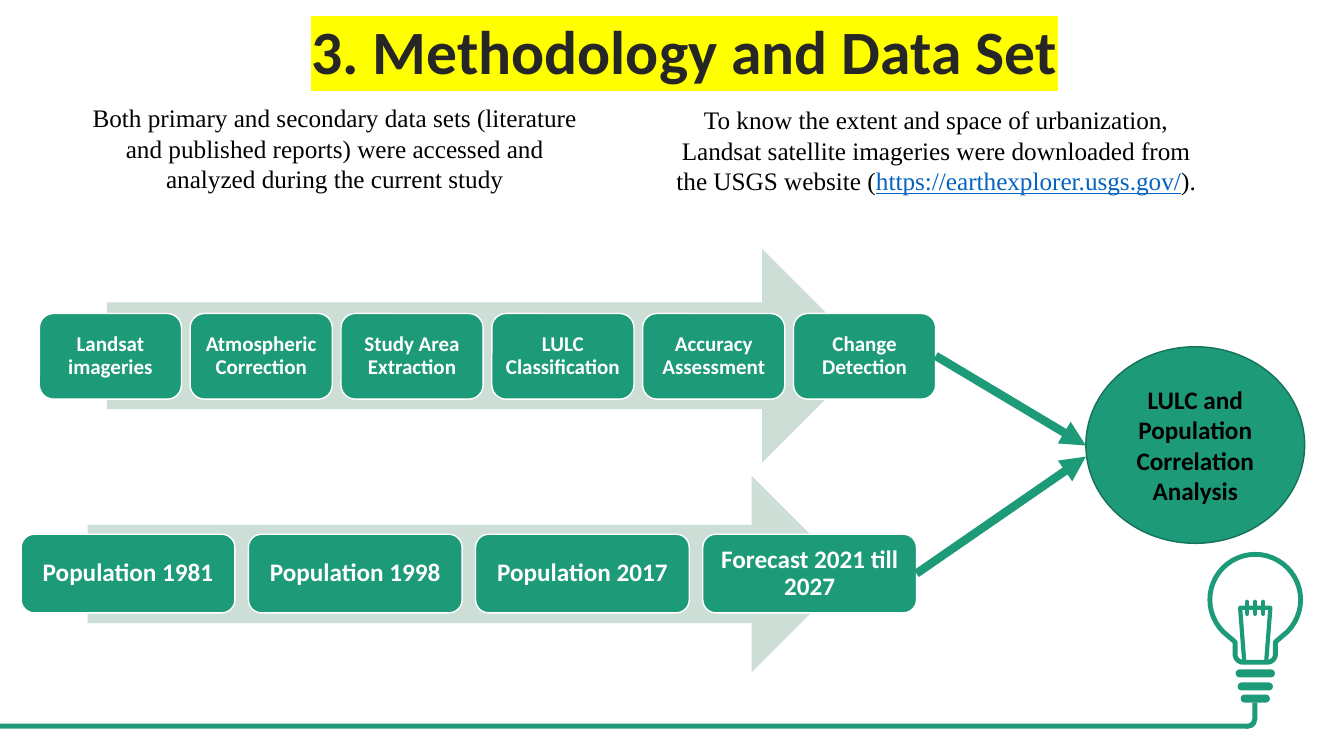
from dataclasses import dataclass
from math import cos, radians, sin

from lxml import etree
from pptx import Presentation
from pptx.dml.color import RGBColor
from pptx.enum.shapes import MSO_CONNECTOR, MSO_SHAPE
from pptx.enum.text import MSO_ANCHOR, PP_ALIGN
from pptx.oxml.ns import qn
from pptx.util import Inches, Pt

ROUND = MSO_SHAPE.ROUNDED_RECTANGLE
RECT = MSO_SHAPE.RECTANGLE
ARROW = MSO_SHAPE.RIGHT_ARROW
OVAL = MSO_SHAPE.OVAL
BEND = MSO_SHAPE.BLOCK_ARC
STRAIGHT = MSO_CONNECTOR.STRAIGHT
MIDDLE = MSO_ANCHOR.MIDDLE
TOP = MSO_ANCHOR.TOP
CENTER = PP_ALIGN.CENTER

SANS, SERIF = "Calibri", "Times New Roman"
COLORS = {
    "green": "1D9A78", "edge": "157259", "pale": "CDDED6", "white": "FFFFFF",
    "black": "000000", "ink": "262626", "link": "0563C1", "mark": "FFFF00",
}
Box = tuple[float, float, float, float]
Point = tuple[float, float]


@dataclass
class Run:
    text: str
    size: float
    font: str = SANS
    color: str = "white"
    bold: bool = True
    under: bool = False


@dataclass
class Flow:
    arrow: Box
    left: float
    right: float
    top: float
    width: float
    height: float
    size: float
    inset: float
    steps: list[str]


@dataclass
class Note:
    box: Box
    runs: list[Run]


@dataclass
class Link:
    start: Point
    end: Point


FLOWS = [
    Flow((1.06, 2.47, 7.56, 2.12), 0.39, 9.28, 3.11, 1.41, 0.85, 15, 0.06,
         ["Landsat imageries", "Atmospheric Correction", "Study Area Extraction",
          "LULC Classification", "Accuracy Assessment", "Change Detection"]),
    Flow((0.87, 4.72, 7.56, 1.95), 0.21, 9.09, 5.3, 2.12, 0.78, 18, 0.07,
         ["Population 1981", "Population 1998", "Population 2017",
          "Forecast 2021 till 2027"]),
]
NOTES = [
    Note((6.56, 0.99, 5.45, 1.01), [
        Run("To know the extent and space of urbanization, Landsat satellite "
            "imageries were downloaded from the USGS website (",
            18, SERIF, "black", False),
        Run("https://earthexplorer.usgs.gov/", 18, SERIF, "link", False, True),
        Run(").", 18, SERIF, "black", False)]),
    Note((0.81, 0.97, 5.02, 1.01), [
        Run("Both primary and secondary data sets (literature and published "
            "reports) were accessed and analyzed during the current study",
            18, SERIF, "black", False)]),
]
LINKS = [Link((9.09, 5.69), (10.77, 4.53)), Link((9.28, 3.53), (10.77, 4.42))]


def rgb(name: str) -> RGBColor:
    return RGBColor.from_string(COLORS[name])


def paint(shape, fill: str | None, line: str | None = None, width: float = 1) -> None:
    shape.shadow.inherit = False
    if fill:
        shape.fill.solid()
        shape.fill.fore_color.rgb = rgb(fill)
    else:
        shape.fill.background()
    if line:
        shape.line.color.rgb = rgb(line)
        shape.line.width = Pt(width)
    else:
        shape.line.fill.background()


def add_box(slide, kind, box: Box, fill: str, line: str | None = None):
    shape = slide.shapes.add_shape(kind, *map(Inches, box))
    paint(shape, fill, line)
    return shape


def write(shape, runs: list[Run], anchor=MIDDLE, space: float = 1,
          inset: float | None = None):
    frame = shape.text_frame
    frame.word_wrap = True
    frame.vertical_anchor = anchor
    if inset is not None:
        frame.margin_left = frame.margin_right = Inches(inset)
        frame.margin_top = frame.margin_bottom = Inches(inset)
    para = frame.paragraphs[0]
    para.alignment = CENTER
    para.line_spacing = space
    for item in runs:
        run = para.add_run()
        run.text = item.text
        font = run.font
        font.size, font.name = Pt(item.size), item.font
        font.bold, font.underline = item.bold, item.under
        font.color.rgb = rgb(item.color)
    return para


def add_title(slide) -> None:
    title = slide.shapes.title
    title.left, title.top, title.width, title.height = map(
        Inches, (0.46, 0.15, 12.66, 0.79))
    para = write(title, [Run("3. Methodology and Data Set", 44, SANS, "ink")], space=0.9)
    para.space_before = Pt(10)
    mark = etree.Element(qn("a:highlight"))
    etree.SubElement(mark, qn("a:srgbClr"), val=COLORS["mark"])
    para.runs[0].font._element.find(qn("a:solidFill")).addnext(mark)


def add_flow(slide, flow: Flow) -> None:
    add_box(slide, ARROW, flow.arrow, "pale")
    pitch = (flow.right - flow.left - flow.width) / (len(flow.steps) - 1)
    for i, step in enumerate(flow.steps):
        box = (flow.left + i * pitch, flow.top, flow.width, flow.height)
        shape = add_box(slide, ROUND, box, "green", "white")
        write(shape, [Run(step, flow.size)], space=0.9, inset=flow.inset)


def add_link(slide, link: Link) -> None:
    line = slide.shapes.add_connector(STRAIGHT, *map(Inches, link.start + link.end))
    line.line.color.rgb = rgb("green")
    line.line.width = Pt(6)
    etree.SubElement(line.line._get_or_add_ln(), qn("a:tailEnd"), type="triangle")
    etree.SubElement(line._element.spPr, qn("a:effectLst"))


def arc(x: float, y: float, r: float, start: int, end: int) -> list[Point]:
    angles = [radians(start + (end - start) * i / 36) for i in range(37)]
    return [(x + r * cos(a), y + r * sin(a)) for a in angles]


def add_path(slide, points: list[Point], fill: str | None, width: float) -> None:
    spots = [(Inches(x), Inches(y)) for x, y in points]
    pen = slide.shapes.build_freeform(*spots[0])
    pen.add_line_segments(spots[1:], close=fill is not None)
    shape = pen.convert_to_shape()
    paint(shape, fill, "green", width)
    shape.line._get_or_add_ln().set("cap", "rnd")


def add_bulb(slide) -> None:
    mid = 12.45
    # Glass
    glass = (arc(mid, 5.95, 0.45, 135, 405) + [(mid + 0.2, 6.37)]
             + arc(mid + 0.12, 6.49, 0.08, 0, 90)
             + arc(mid - 0.12, 6.49, 0.08, 90, 180) + [(mid - 0.2, 6.37)])
    add_path(slide, glass, "white", 3.5)
    # Filament
    wire = [(mid - 0.11, 6.55), (mid - 0.15, 6.03), (mid + 0.15, 6.03), (mid + 0.11, 6.55)]
    add_path(slide, wire, None, 3)
    for shift in (-0.08, 0, 0.08):
        add_path(slide, [(mid + shift, 5.97), (mid + shift, 6.09)], None, 3)
    # Screw base
    for top, width in ((6.64, 0.39), (6.77, 0.35), (6.89, 0.29)):
        rung = add_box(slide, ROUND, (mid - width / 2, top, width, 0.08), "green")
        rung.adjustments[0] = 0.5
    # Cable
    add_box(slide, RECT, (0, 7.18, 12.37, 0.05), "green")
    add_box(slide, RECT, (12.42, 6.97, 0.05, 0.17), "green")
    bend = add_box(slide, BEND, (12.28, 7.04, 0.19, 0.19), "green")
    for i, value in enumerate((213.39, 60.92, 0.27)):
        bend.adjustments[i] = value


def main() -> None:
    deck = Presentation()
    deck.slide_width, deck.slide_height = Inches(13.33), Inches(7.5)
    slide = deck.slides.add_slide(deck.slide_layouts[5])
    add_bulb(slide)
    add_title(slide)
    for note in NOTES:
        write(slide.shapes.add_textbox(*map(Inches, note.box)), note.runs, TOP)
    # Result
    goal = add_box(slide, OVAL, (10.77, 3.44, 2.17, 1.95), "green", "edge")
    write(goal, [Run("LULC and Population Correlation Analysis", 18, SANS, "black")])
    for flow in FLOWS:
        add_flow(slide, flow)
    for link in LINKS:
        add_link(slide, link)
    deck.save("out.pptx")


if __name__ == "__main__":
    main()
